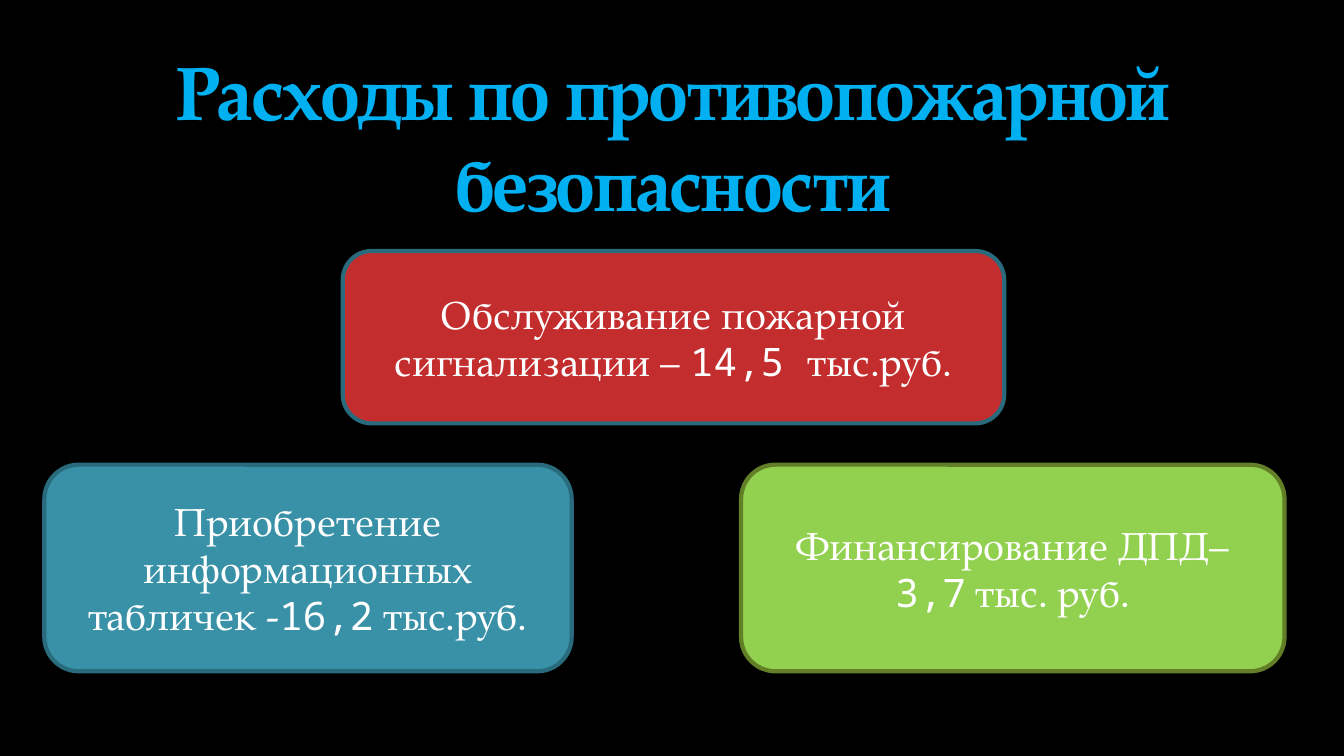
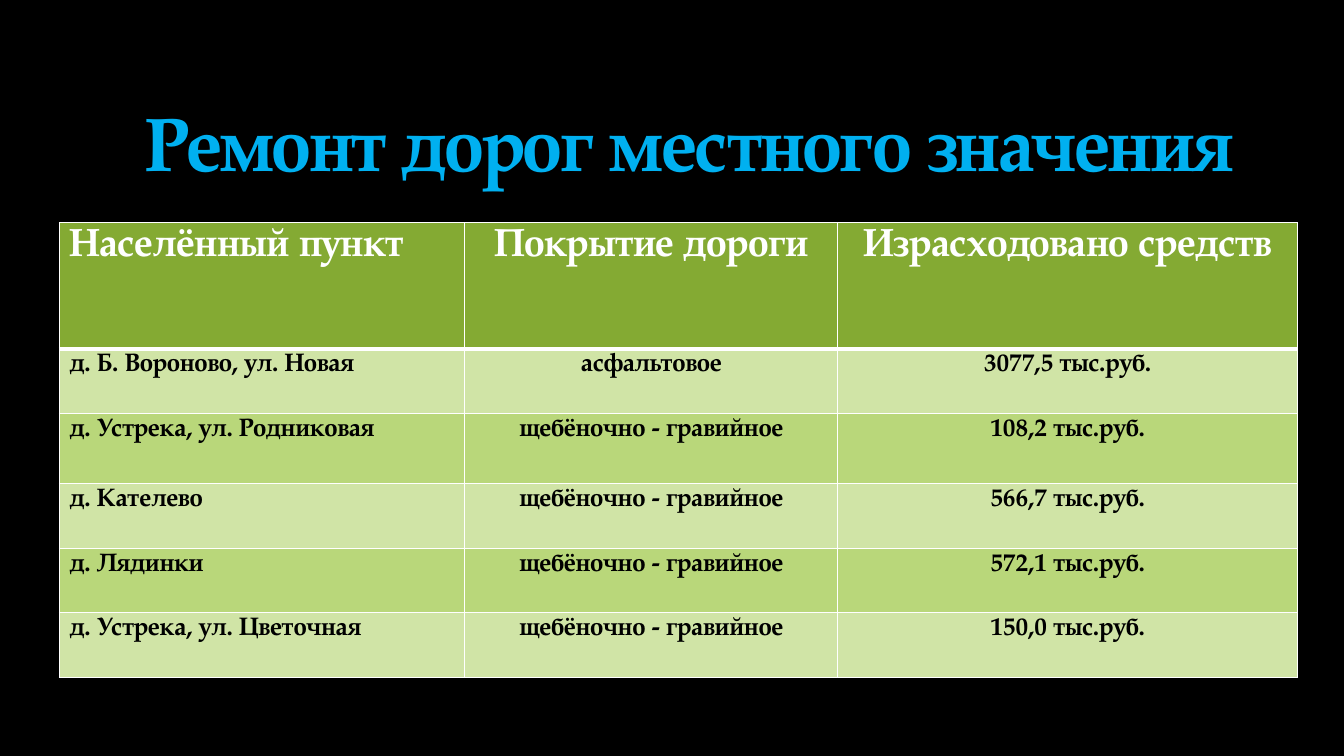
from dataclasses import dataclass

import lxml.etree
import pptx
import pptx.dml.color
import pptx.enum.shapes
import pptx.enum.text
import pptx.oxml
import pptx.oxml.ns
import pptx.util

Inches = pptx.util.Inches
Pt = pptx.util.Pt
SHAPE = pptx.enum.shapes.MSO_SHAPE
ALIGN = pptx.enum.text.PP_ALIGN
ANCHOR = pptx.enum.text.MSO_ANCHOR


@dataclass(frozen=True)
class Theme:
    font: str = "TeX Gyre Pagella"
    figure_font: str = "Noto Sans Mono"
    title_size: int = 54
    body_size: int = 28
    row_size: int = 18
    card_line: int = 3
    background: str = "000000"
    title: str = "00B0F0"
    title_outline: str = "462219"
    light: str = "FFFFFF"
    dark: str = "000000"
    red: str = "C32D2E"
    teal: str = "3891A7"
    teal_edge: str = "296B7C"
    green: str = "92D050"
    green_edge: str = "627E26"
    header: str = "84AA33"
    bands: tuple = ("D0E4A6", "B9D77A")


THEME = Theme()


def rgb(value):
    return pptx.dml.color.RGBColor.from_string(value)


def child(parent, tag, **attributes):
    return lxml.etree.SubElement(parent, pptx.oxml.ns.qn(tag), **attributes)


def add_text(paragraph, text, *, size=THEME.body_size, color=THEME.light,
             font=THEME.font, bold=False, align=ALIGN.CENTER):
    paragraph.alignment = align
    run = paragraph.add_run()
    run.text = text
    run.font.name = font
    run.font.size = Pt(size)
    run.font.bold = bold
    run.font.color.rgb = rgb(color)
    return run


def add_title(slide, text, box):
    frame = slide.shapes.add_textbox(*map(Inches, box)).text_frame
    frame.word_wrap = True
    frame.vertical_anchor = ANCHOR.BOTTOM
    run = add_text(frame.paragraphs[0], text, size=THEME.title_size,
                   color=THEME.title, bold=True)
    # Tight letter spacing and a faint outline
    properties = run.font._element
    properties.set("spc", "-100")
    outline = lxml.etree.Element(pptx.oxml.ns.qn("a:ln"), w=str(Pt(0.25)))
    color = child(child(outline, "a:solidFill"), "a:srgbClr", val=THEME.title_outline)
    child(color, "a:alpha", val="25000")
    properties.insert(0, outline)


def add_card(slide, box, parts, fill, edge, outline=SHAPE.FLOWCHART_ALTERNATE_PROCESS):
    """Rounded card; parts are the words before, the figure, and the unit."""
    card = slide.shapes.add_shape(outline, *map(Inches, box))
    card.shadow.inherit = False
    card.fill.solid()
    card.fill.fore_color.rgb = rgb(fill)
    card.line.color.rgb = rgb(edge)
    card.line.width = Pt(THEME.card_line)
    frame = card.text_frame
    frame.word_wrap = True
    frame.vertical_anchor = ANCHOR.MIDDLE
    for text, font in zip(parts, (THEME.font, THEME.figure_font, THEME.font)):
        add_text(frame.paragraphs[0], text, font=font)


def set_borders(cell, top, bottom):
    properties = cell._tc.get_or_add_tcPr()
    for side, width in (("L", 1), ("R", 1), ("T", top), ("B", bottom)):
        line = child(properties, f"a:ln{side}", w=str(Pt(width)))
        child(child(line, "a:solidFill"), "a:srgbClr", val=THEME.light)


def add_road_table(slide, box, column_widths, row_heights, rows):
    table = slide.shapes.add_table(len(rows), len(column_widths),
                                   *map(Inches, box)).table
    for column, width in zip(table.columns, column_widths):
        column.width = Inches(width)
    for index, (row, height, texts) in enumerate(zip(table.rows, row_heights, rows)):
        row.height = Inches(height)
        is_header = index == 0
        fill = THEME.header if is_header else THEME.bands[(index - 1) % 2]
        for position, (cell, text) in enumerate(zip(row.cells, texts)):
            set_borders(cell, top=3 if index == 1 else 1, bottom=3 if is_header else 1)
            cell.fill.solid()
            cell.fill.fore_color.rgb = rgb(fill)
            add_text(cell.text_frame.paragraphs[0], text, bold=True,
                     size=THEME.body_size if is_header else THEME.row_size,
                     color=THEME.light if is_header else THEME.dark,
                     align=ALIGN.CENTER if position else ALIGN.LEFT)


def build_fire_safety(slide):
    add_title(slide, "Расходы по противопожарной безопасности", (0.67, 0.17, 12, 2.13))
    add_card(slide, (3.4, 2.49, 6.56, 1.71),
             ("Обслуживание пожарной сигнализации – ", "14,5 ", "тыс.руб."),
             THEME.red, THEME.teal_edge)
    # Lower pair shares top and height
    top, height = 4.61, 2.05
    add_card(slide, (0.44, top, 5.23, height),
             ("Приобретение информационных табличек -", "16,2", " тыс.руб."),
             THEME.teal, THEME.teal_edge)
    add_card(slide, (7.35, top, 5.39, height),
             ("Финансирование ДПД– ", "3,7", " тыс. руб."),
             THEME.green, THEME.green_edge, SHAPE.ROUNDED_RECTANGLE)


def build_road_repair(slide):
    add_title(slide, "Ремонт дорог местного значения", (1.09, 0.4, 11.5, 1.5))
    gravel = "щебёночно - гравийное"
    rows = [
        ("Населённый пункт", "Покрытие дороги", "Израсходовано средств"),
        ("д. Б. Вороново, ул. Новая", "асфальтовое", "3077,5 тыс.руб."),
        ("д. Устрека, ул. Родниковая", gravel, "108,2 тыс.руб."),
        ("д. Кателево", gravel, "566,7 тыс.руб."),
        ("д. Лядинки", gravel, "572,1 тыс.руб."),
        ("д. Устрека, ул. Цветочная", gravel, "150,0 тыс.руб."),
    ]
    add_road_table(slide, (0.59, 2.21, 12.28, 4.51), (4.02, 3.7, 4.56),
                   (1.25, 0.64, 0.7, 0.64, 0.64, 0.64), rows)


def main():
    deck = pptx.Presentation()
    deck.slide_width, deck.slide_height = Inches(13.33), Inches(7.5)
    # Background shared by all slides
    background = deck.slide_master.background.fill
    background.solid()
    background.fore_color.rgb = rgb(THEME.background)
    for build in (build_fire_safety, build_road_repair):
        build(deck.slides.add_slide(deck.slide_layouts[6]))
    deck.save("out.pptx")


if __name__ == "__main__":
    main()
